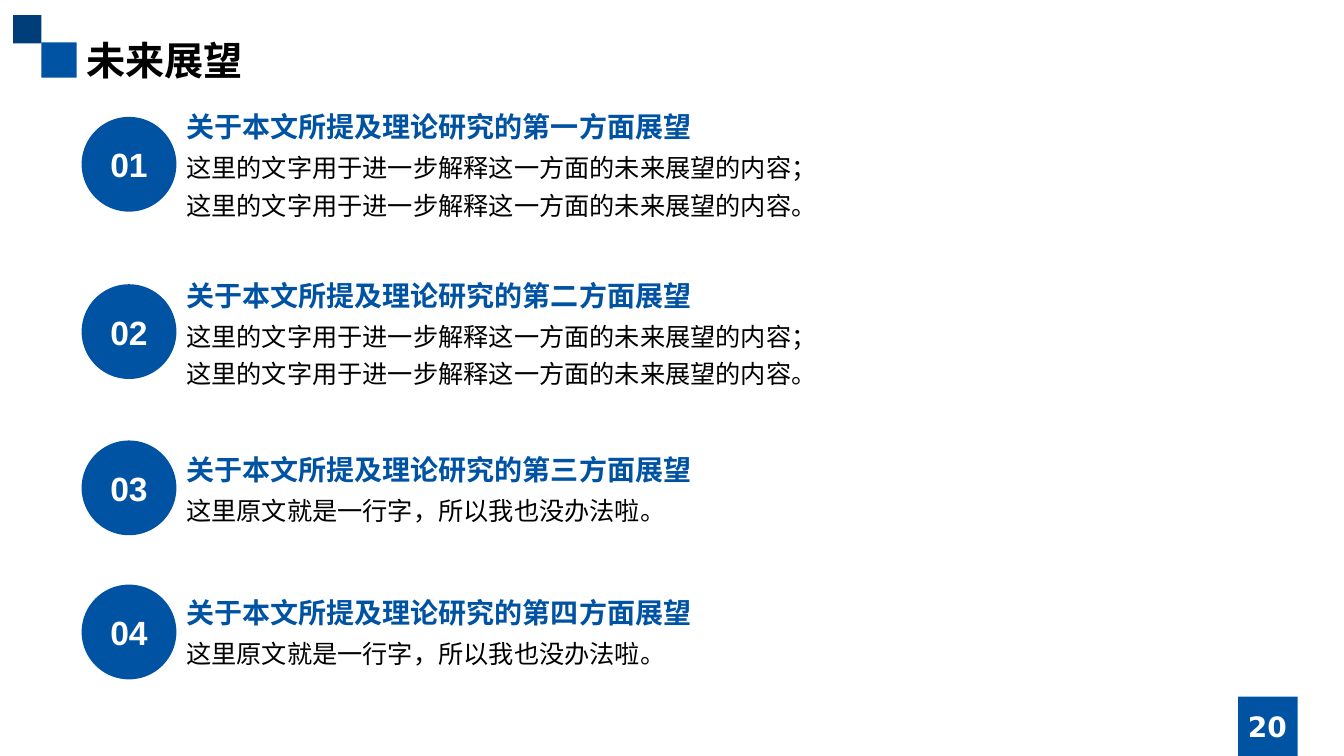
import dataclasses

import lxml.etree
import pptx
import pptx.dml.color
import pptx.enum.shapes
import pptx.enum.text
import pptx.oxml.ns
import pptx.util

Inches = pptx.util.Inches
SHAPES = pptx.enum.shapes.MSO_SHAPE
ALIGN = pptx.enum.text.PP_ALIGN
ANCHOR = pptx.enum.text.MSO_ANCHOR


@dataclasses.dataclass(frozen=True)
class Theme:
    blue: str = "0053A3"
    navy: str = "003E7A"
    black: str = "000000"
    white: str = "FFFFFF"
    latin: str = "Arial"
    chinese: str = "Noto Sans CJK SC"
    digits: str = "DejaVu Sans"
    title: int = 28
    number: int = 24
    heading: int = 20
    body: int = 18


theme = Theme()
deck = pptx.Presentation()
deck.slide_width, deck.slide_height = Inches(13.33), Inches(7.5)
slide = deck.slides.add_slide(deck.slide_layouts[6])


def add_solid(kind, left, top, size, color):
    solid = slide.shapes.add_shape(kind, Inches(left), Inches(top), Inches(size), Inches(size))
    solid.shadow.inherit = False
    solid.fill.solid()
    solid.fill.fore_color.rgb = pptx.dml.color.RGBColor.from_string(color)
    solid.line.fill.background()
    return solid


def write(holder, text, size, color, font=theme.latin, bold=True, align=ALIGN.LEFT,
          anchor=ANCHOR.TOP, spacing=None):
    """Fill a shape or text box, one paragraph per line of text."""
    frame = holder.text_frame
    frame.text = text
    frame.word_wrap = True
    frame.vertical_anchor = anchor
    for paragraph in frame.paragraphs:
        paragraph.alignment = align
        paragraph.line_spacing = spacing
        for run in paragraph.runs:
            run.font.name = font
            run.font.size = pptx.util.Pt(size)
            run.font.bold = bold
            run.font.color.rgb = pptx.dml.color.RGBColor.from_string(color)
            east_asian = lxml.etree.Element(pptx.oxml.ns.qn("a:ea"), typeface=theme.chinese)
            run.font._element.find(pptx.oxml.ns.qn("a:latin")).addnext(east_asian)


# Title and page number
for left, top, size, color in [
    (0.41, 0.42, 0.35, theme.blue),
    (0.13, 0.15, 0.28, theme.navy),
    (12.28, 6.91, 0.59, theme.blue),
]:
    add_solid(SHAPES.RECTANGLE, left, top, size, color)

title = slide.shapes.add_textbox(Inches(0.76), Inches(0.31), Inches(11.81), Inches(0.57))
write(title, "未来展望", theme.title, theme.black, theme.chinese)

page_number = slide.shapes.add_textbox(Inches(11.81), Inches(7.01), Inches(1.52), Inches(0.4))
write(page_number, "20", theme.heading, theme.white, theme.digits,
      align=ALIGN.CENTER, anchor=ANCHOR.MIDDLE)

# Four outlooks: ordinal, circle top, heading top, explanation
two_lines = "这里的文字用于进一步解释这一方面的未来展望的内容；\n这里的文字用于进一步解释这一方面的未来展望的内容。"
one_line = "这里原文就是一行字，所以我也没办法啦。"
outlooks = [
    ("一", 1.16, 1.04, two_lines),
    ("二", 2.82, 2.71, two_lines),
    ("三", 4.37, 4.44, one_line),
    ("四", 5.80, 5.86, one_line),
]
for number, (ordinal, circle_top, heading_top, explanation) in enumerate(outlooks, start=1):
    circle = add_solid(SHAPES.OVAL, 0.81, circle_top, 0.94, theme.blue)
    write(circle, f"{number:02d}", theme.number, theme.white,
          align=ALIGN.CENTER, anchor=ANCHOR.MIDDLE)

    body_height = 0.43 * len(explanation.splitlines())
    body = slide.shapes.add_textbox(
        Inches(1.75), Inches(heading_top + 0.35), Inches(10.83), Inches(body_height))
    write(body, explanation, theme.body, theme.black, bold=False, spacing=1.25)

    heading = slide.shapes.add_textbox(
        Inches(1.75), Inches(heading_top), Inches(10.83), Inches(0.44))
    write(heading, f"关于本文所提及理论研究的第{ordinal}方面展望", theme.heading, theme.blue)

deck.save("out.pptx")
